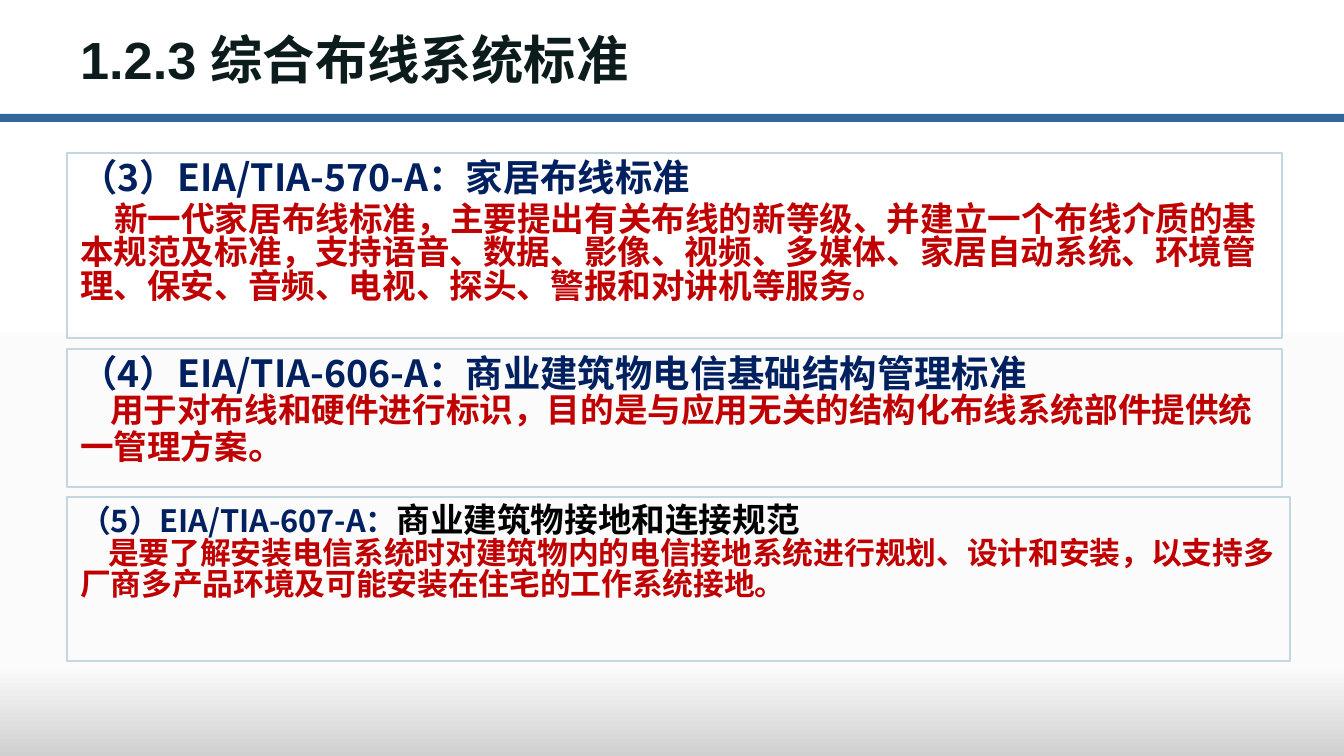
from dataclasses import dataclass

from lxml import etree
from pptx import Presentation
from pptx import util as u
from pptx.dml.color import RGBColor
from pptx.enum import shapes, text
from pptx.oxml import ns

PX = 914400 / 134.4


@dataclass(frozen=True)
class Theme:
    title_font: str = "Arial"
    body_font: str = "Noto Sans CJK SC"
    title: str = "0C1C1D"
    bar: str = "336699"
    border: str = "C3D7E1"
    heading: str = "002060"
    accent: str = "C00000"
    black: str = "000000"
    title_size: float = 28
    large: float = 20
    medium: float = 18
    small: float = 16.5
    heading_spacing: float = 0.9
    body_spacing: float = 0.83
    backdrop: tuple = ((0, "FFFFFF"), (88, "FBFBFB"), (100, "D0D0D0"))


THEME = Theme()


@dataclass(frozen=True)
class Area:
    left: int
    top: int
    width: int
    height: int


@dataclass(frozen=True)
class Span:
    words: str
    size: float
    color: str
    font: str = THEME.body_font


@dataclass(frozen=True)
class Standard:
    area: Area
    heading: list[Span]
    body: list[Span]
    indent: int
    gap: float = 0


STANDARDS = [
    Standard(
        Area(67, 153, 1215, 185),
        [Span("（3）EIA/TIA-570-A：家居布线标准", THEME.large, THEME.heading)],
        [Span("新一代家居布线标准，主要提出有关布线的新等级、并建立一个布线介质的基本规范及标准，"
              "支持语音、数据、影像、视频、多媒体、家居自动系统、环境管理、保安、音频、电视、探头、"
              "警报和对讲机等服务。", THEME.medium, THEME.accent)],
        indent=34, gap=2.5,
    ),
    Standard(
        Area(67, 349, 1215, 138),
        [Span("（4）EIA/TIA-606-A：商业建筑物电信基础结构管理标准", THEME.large, THEME.heading)],
        [Span("用于对布线和硬件进行标识，目的是与应用无关的结构化布线系统部件提供统一管理方案",
              THEME.medium, THEME.accent),
         Span("。", THEME.large, THEME.accent)],
        indent=30,
    ),
    Standard(
        Area(67, 497, 1223, 164),
        [Span("（5）EIA/TIA-607-A：", THEME.small, THEME.heading),
         Span("商业建筑物接地和连接规范", THEME.medium, THEME.black, THEME.title_font)],
        [Span("是要了解安装电信系统时对建筑物内的电信接地系统进行规划、设计和安装，"
              "以支持多厂商多产品环境及可能安装在住宅的工作系统接地。", THEME.small, THEME.accent)],
        indent=28,
    ),
]


def px(length: int) -> int:
    return round(length * PX)


def place(area: Area) -> tuple[int, int, int, int]:
    return px(area.left), px(area.top), px(area.width), px(area.height)


def add_spans(para, spans: list[Span]) -> None:
    para.alignment = text.PP_ALIGN.LEFT
    for span in spans:
        run = para.add_run()
        run.text = span.words
        run.font.size = u.Pt(span.size)
        run.font.bold = True
        run.font.name = span.font
        run.font.color.rgb = RGBColor.from_string(span.color)
        east_asian = etree.SubElement(run.font._element, ns.qn("a:ea"))
        east_asian.set("typeface", THEME.body_font)


def paint_background(page) -> None:
    fill = page.background.fill
    fill.gradient()
    fill.gradient_angle = 270
    stops = page.background._cSld.find(".//" + ns.qn("a:gsLst"))
    for stop in list(stops):
        stops.remove(stop)
    for percent, color in THEME.backdrop:
        stop = etree.SubElement(stops, ns.qn("a:gs"), pos=str(percent * 1000))
        etree.SubElement(stop, ns.qn("a:srgbClr"), val=color)


def add_rectangle(page, area: Area):
    box = page.shapes.add_shape(shapes.MSO_SHAPE.RECTANGLE, *place(area))
    box.shadow.inherit = False
    return box


def add_bar(page, area: Area) -> None:
    bar = add_rectangle(page, area)
    bar.fill.solid()
    bar.fill.fore_color.rgb = RGBColor.from_string(THEME.bar)
    bar.line.fill.background()


def add_title(page, area: Area, span: Span) -> None:
    frame = page.shapes.add_textbox(*place(area)).text_frame
    frame.word_wrap = True
    frame.vertical_anchor = text.MSO_ANCHOR.MIDDLE
    add_spans(frame.paragraphs[0], [span])


def add_standard(page, standard: Standard) -> None:
    box = add_rectangle(page, standard.area)
    box.fill.background()
    box.line.color.rgb = RGBColor.from_string(THEME.border)
    box.line.width = u.Pt(0.75)
    frame = box.text_frame
    frame.word_wrap = True
    frame.vertical_anchor = text.MSO_ANCHOR.TOP
    heading = frame.paragraphs[0]
    heading.line_spacing = THEME.heading_spacing
    add_spans(heading, standard.heading)
    body = frame.add_paragraph()
    body.line_spacing = THEME.body_spacing
    body.space_before = u.Pt(standard.gap)
    body._p.get_or_add_pPr().set("indent", str(px(standard.indent)))
    add_spans(body, standard.body)


def main() -> None:
    deck = Presentation()
    deck.slide_width, deck.slide_height = px(1344), px(756)
    page = deck.slides.add_slide(deck.slide_layouts[6])
    paint_background(page)
    add_bar(page, Area(-1, 114, 1346, 8))
    add_title(page, Area(67, 12, 1200, 94),
              Span("1.2.3 综合布线系统标准", THEME.title_size, THEME.title, THEME.title_font))
    for standard in STANDARDS:
        add_standard(page, standard)
    deck.save("out.pptx")


if __name__ == "__main__":
    main()
